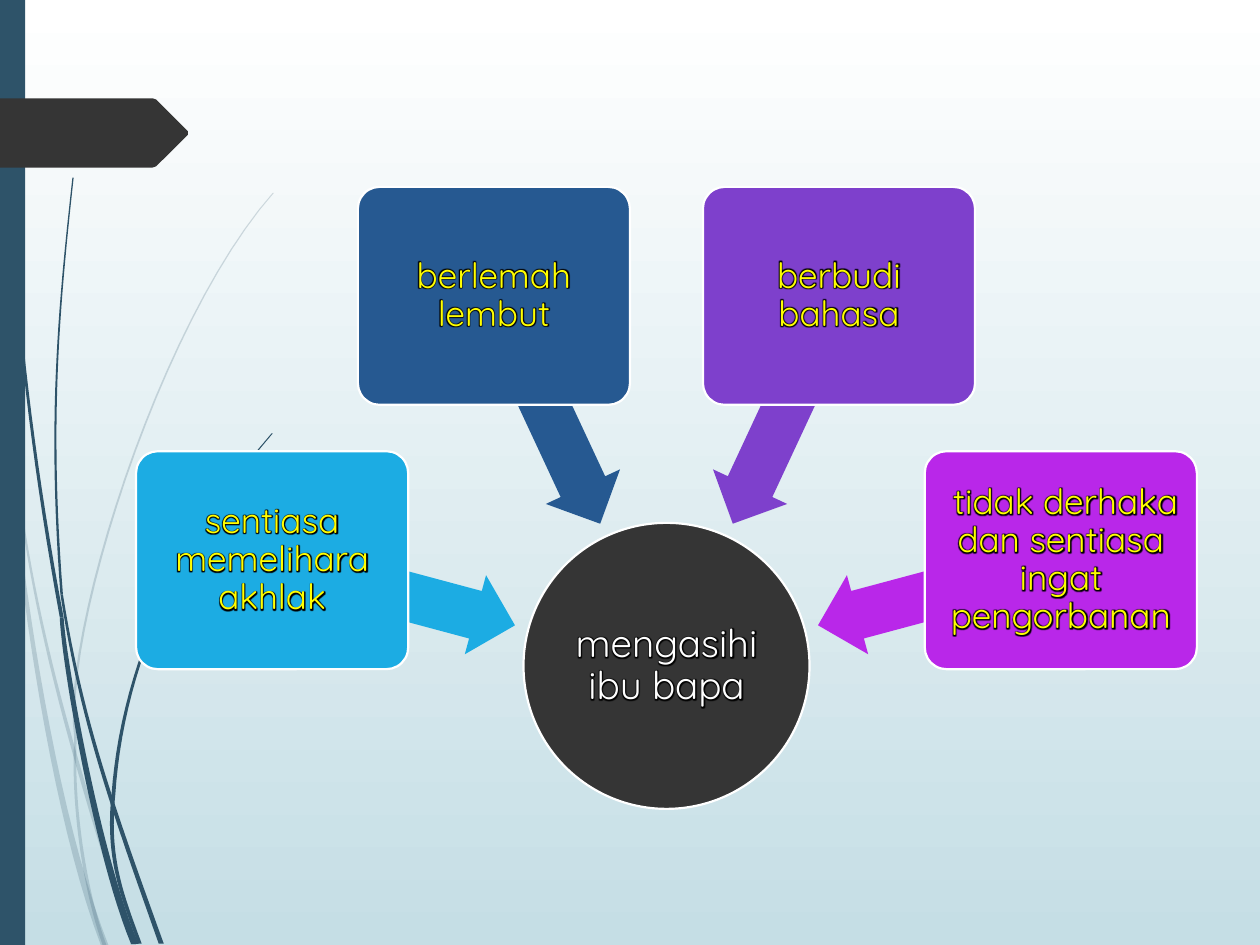
import math
from dataclasses import dataclass

import lxml.etree
import pptx
import pptx.util
from pptx.dml.color import RGBColor
from pptx.enum.shapes import MSO_SHAPE
from pptx.enum.text import MSO_ANCHOR, PP_ALIGN
from pptx.oxml.ns import qn
from pptx.util import Inches


@dataclass(frozen=True)
class Theme:
    font: str = "Quicksand"
    hub_size: int = 22
    card_size: int = 20
    outline_width: float = 1.25
    teal: str = "2E5369"
    charcoal: str = "353535"
    white: str = "FFFFFF"
    yellow: str = "FFFF00"
    sky: str = "C5DEE5"
    glow: str = "000000"


THEME = Theme()

CARDS = [
    ("sentiasa memelihara akhlak", "1CACE3"),
    ("berlemah lembut", "265991"),
    ("berbudi bahasa", "7E40CC"),
    (" tidak derhaka dan sentiasa ingat pengorbanan", "B927E9"),
]

# Each blade: four points on its curve, then its width at the start and at the end.
PALE_BLADES = [
    ((0.03, 2.9), (0.15, 4.3), (0.42, 6), (0.83, 7.5), 0.01, 0.06),
    ((0.1, 3.5), (0.27, 4.65), (0.57, 5.9), (1.06, 7.5), 0.01, 0.04),
    ((2.17, 1.53), (1.33, 2.94), (0.75, 4.62), (0.6, 5.85), 0.01, 0.02),
    ((0.6, 5.85), (0.61, 6.4), (0.69, 6.98), (0.83, 7.5), 0.02, 0.03),
]
DARK_BLADES = [
    ((0.03, 0), (0.09, 1.7), (0.24, 3.3), (0.49, 4.9), 0.01, 0.03),
    ((0.49, 4.9), (0.58, 5.56), (0.79, 6.58), (1.07, 7.49), 0.03, 0.06),
    ((0.58, 1.41), (0.48, 2.45), (0.44, 3.5), (0.49, 4.72), 0.01, 0.02),
    ((0.49, 4.72), (0.68, 5.65), (0.94, 6.52), (1.28, 7.49), 0.02, 0.04),
    ((2.16, 3.44), (1.48, 4.41), (1.07, 5.38), (0.9, 6.31), 0.01, 0.03),
    ((0.9, 6.31), (0.9, 6.75), (0.98, 7.12), (1.11, 7.49), 0.03, 0.03),
]


def paint(shape, color, outline=None, opacity=100):
    shape.shadow.inherit = False
    shape.fill.solid()
    shape.fill.fore_color.rgb = RGBColor.from_string(color)
    if opacity < 100:
        color_element = shape._element.spPr.find(qn("a:solidFill"))[0]
        lxml.etree.SubElement(color_element, qn("a:alpha"), val=str(opacity * 1000))
    if outline:
        shape.line.color.rgb = RGBColor.from_string(outline)
        shape.line.width = pptx.util.Pt(THEME.outline_width)
    else:
        shape.line.fill.background()


def add_outline(slide, left, top, points, color, opacity=100):
    corners = [(Inches(left + x), Inches(top + y)) for x, y in points]
    builder = slide.shapes.build_freeform(*corners[0], scale=1.0)
    builder.add_line_segments(corners[1:], close=True)
    paint(builder.convert_to_shape(), color, opacity=opacity)


def interpolate(knots, t):
    """Return the point at t on the cubic that meets the knots at even steps."""
    x = y = 0
    for i, knot in enumerate(knots):
        weight = math.prod((3 * t - j) / (i - j) for j in range(4) if j != i)
        x, y = x + weight * knot[0], y + weight * knot[1]
    return x, y


def blade_outline(*blade, steps=24):
    """Outline a tapering blade; as blades are steep, its width runs sideways."""
    *knots, start_width, end_width = blade
    right, left = [], []
    for step in range(steps + 1):
        t = step / steps
        x, y = interpolate(knots, t)
        half = (start_width + (end_width - start_width) * t) / 2
        right.append((x + half, y))
        left.append((x - half, y))
    return right + left[::-1]


def add_side_decoration(slide, left, top, height):
    for blades, opacity in ((PALE_BLADES, 20), (DARK_BLADES, 100)):
        for blade in blades:
            add_outline(slide, left, top, blade_outline(*blade), THEME.teal, opacity)
    band = slide.shapes.add_shape(MSO_SHAPE.RECTANGLE, Inches(left), Inches(top), Inches(0.2), Inches(height))
    paint(band, THEME.teal)
    upper_edge = [(0, 0), (1.21, 0), (1.24, 0.01), (1.49, 0.26)]
    lower_edge = [(x, 0.55 - y) for x, y in reversed(upper_edge)]
    add_outline(slide, left, top + 0.78, upper_edge + lower_edge, THEME.charcoal)


def add_centered(slide, kind, center_x, center_y, width, height):
    return slide.shapes.add_shape(kind, Inches(center_x - width / 2), Inches(center_y - height / 2),
                                  Inches(width), Inches(height))


def write_label(shape, text, size, color, inset):
    frame = shape.text_frame
    frame.text = text
    frame.word_wrap = True
    frame.vertical_anchor = MSO_ANCHOR.MIDDLE
    frame.margin_left = frame.margin_right = frame.margin_top = frame.margin_bottom = Inches(inset)
    paragraph = frame.paragraphs[0]
    paragraph.alignment = PP_ALIGN.CENTER
    paragraph.line_spacing = 0.9
    font = paragraph.runs[0].font
    font.name, font.size = THEME.font, pptx.util.Pt(size)
    font.color.rgb = RGBColor.from_string(color)
    effects = lxml.etree.Element(qn("a:effectLst"))
    glow = lxml.etree.SubElement(effects, qn("a:glow"), rad="38100")
    lxml.etree.SubElement(glow, qn("a:srgbClr"), val=THEME.glow)
    font._element.find(qn("a:solidFill")).addnext(effects)


def add_radial_diagram(slide, left, top, width, height):
    """Place the hub at the bottom centre of the box and fan the cards above it."""
    diameter = 2.27
    hub_x, hub_y = left + width / 2, top + height - diameter / 2
    hub = add_centered(slide, MSO_SHAPE.OVAL, hub_x, hub_y, diameter, diameter)
    paint(hub, THEME.charcoal, THEME.white)
    write_label(hub, "mengasihi ibu bapa", THEME.hub_size, THEME.white, 0.02)
    for index, (text, color) in enumerate(CARDS):
        angle = 195 + 50 * index
        across, down = math.cos(math.radians(angle)), math.sin(math.radians(angle))
        arrow = add_centered(slide, MSO_SHAPE.LEFT_ARROW, hub_x + 2.24 * across, hub_y + 2.24 * down, 1.99, 0.65)
        arrow.adjustments[0], arrow.adjustments[1] = 0.6, 0.5
        arrow.rotation = angle
        paint(arrow, color)
        card = add_centered(slide, MSO_SHAPE.ROUNDED_RECTANGLE, hub_x + 3.24 * across, hub_y + 3.24 * down, 2.16, 1.73)
        card.adjustments[0] = 0.1
        paint(card, color, THEME.white)
        write_label(card, text, THEME.card_size, THEME.yellow, 0.04)


def main():
    presentation = pptx.Presentation()
    presentation.slide_width, presentation.slide_height = Inches(10), Inches(7.5)
    slide = presentation.slides.add_slide(presentation.slide_layouts[6])
    background = slide.background.fill
    background.gradient()
    background.gradient_angle = 270
    for stop, color in zip(background.gradient_stops, (THEME.white, THEME.sky)):
        stop.color.rgb = RGBColor.from_string(color)
    add_side_decoration(slide, 0, 0, 7.5)
    add_radial_diagram(slide, 1.08, 1.49, 8.42, 4.93)
    presentation.save("out.pptx")


if __name__ == "__main__":
    main()
